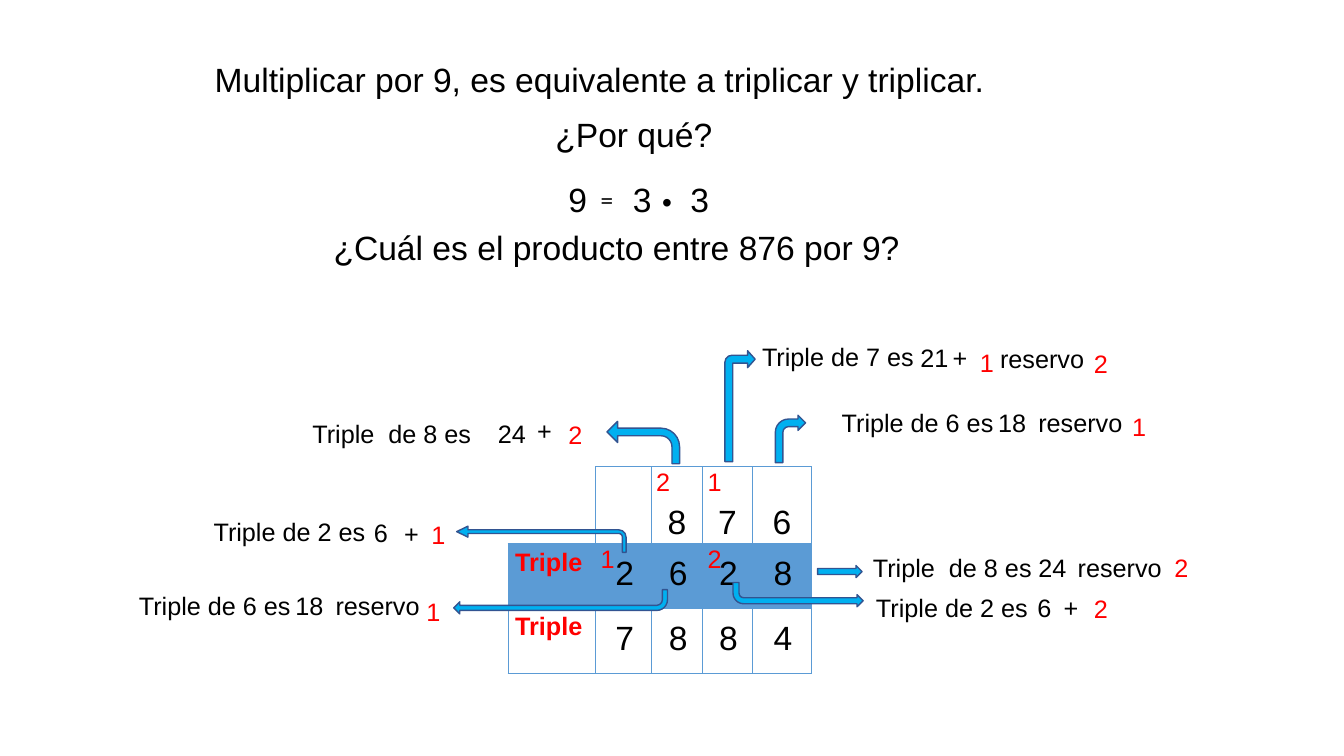
from itertools import accumulate
from lxml.etree import SubElement
from pptx import Presentation
from pptx.dml.color import RGBColor
from pptx.enum.shapes import MSO_SHAPE
from pptx.enum.text import MSO_ANCHOR, MSO_AUTO_SIZE, PP_ALIGN
from pptx.oxml.ns import qn
from pptx.util import Inches, Pt

COLORS = {"ink": "000000", "red": "FF0000", "grid": "5B9BD5",
          "arrow": "00B0F0", "edge": "325491"}
PLAIN = "{2D5ABB26-0587-4C30-8999-92F81FD0307C}"
COLS = [0.87, 0.55, 0.51, 0.49, 0.59]
ROWS = [0.77, 0.64, 0.64]
WIDTHS = {"reservo": 1.08, "18": 0.55, "24": 0.51, "21": 0.59, "6": 0.35}


def paint(name):
    return RGBColor.from_string(COLORS[name])


def write(para, text, size, color="ink", bold=False, font="Arial"):
    run = para.add_run()
    run.text = text
    run.font.size = Pt(size)
    run.font.name = font
    run.font.bold = bold
    run.font.color.rgb = paint(color)


def space(para):
    para.line_spacing = 1.15
    para.space_after = Pt(10)


def label(slide, box, text, size, color="ink", font="Arial", wrap=True):
    frame = slide.shapes.add_textbox(*map(Inches, box)).text_frame
    frame.word_wrap = wrap
    frame.auto_size = MSO_AUTO_SIZE.SHAPE_TO_FIT_TEXT
    para = frame.paragraphs[0]
    if color == "red":
        para.alignment = PP_ALIGN.CENTER
    if color == "red" or not wrap:
        space(para)
    write(para, text, size, color, font=font)


def heading(slide, left, top):
    label(slide, (left, top, 7.92, 0.53),
          "Multiplicar por 9, es equivalente a triplicar y triplicar.", 24, wrap=False)
    label(slide, (left + 3.38, top + 0.6, 2.08, 0.5), "¿Por qué?", 24)
    # Equation 9 = 3 • 3
    signs = [(3.51, "9", 24, "Arial"), (3.83, "=", 18, "Calibri"),
             (4.15, "3", 24, "Arial"), (4.44, "•", 20, "Arial"), (4.72, "3", 24, "Arial")]
    for shift, sign, size, font in signs:
        drop = 1.25 if size == 24 else 1.3
        label(slide, (left + shift, top + drop, 0.43, 0.5), sign, size, font=font)
    label(slide, (left + 1.18, top + 1.72, 6, 0.5),
          "¿Cuál es el producto entre 876 por 9?", 24)


def border(cell, sides):
    props = cell._tc.get_or_add_tcPr()
    for side in "LRTB":
        if side in sides:
            line = SubElement(props, qn("a:ln" + side), w=str(Pt(sides[side])))
            fill = SubElement(line, qn("a:solidFill"))
            SubElement(fill, qn("a:srgbClr"), val=COLORS["grid"])


def shade(cell, on):
    if not on:
        cell.fill.background()
        return
    cell.fill.solid()
    cell.fill.fore_color.rgb = paint("grid")
    tint = cell._tc.tcPr.find(".//" + qn("a:srgbClr"))
    SubElement(tint, qn("a:alpha"), val="20000")


def product(slide, left, top):
    frame = slide.shapes.add_table(3, 5, *map(Inches, (left, top, sum(COLS), sum(ROWS))))
    table = frame.table
    table.first_row = table.horz_banding = False
    table._tbl.tblPr.find(qn("a:tableStyleId")).text = PLAIN
    for col, width in zip(table.columns, COLS):
        col.width = Inches(width)
    for row, height in zip(table.rows, ROWS):
        row.height = Inches(height)
    for i in range(3):
        for j in range(5):
            cell = table.cell(i, j)
            cell.margin_left = cell.margin_right = Inches(0.07)
            cell.margin_top = cell.margin_bottom = 0
            sides = {"L": 1, "R": 1, "T": 2 if i == 1 else 1, "B": 1 if i else 2}
            if i == j == 0:
                sides = {"R": 1, "B": 2}
            border(cell, sides)
            shade(cell, i == 1)
            para = cell.text_frame.paragraphs[0]
            if i == 0 and j > 1:
                cell.vertical_anchor = MSO_ANCHOR.BOTTOM
                cell.margin_bottom = Inches(0.03)
                para.alignment = PP_ALIGN.CENTER
                para.line_spacing = 1.15
                write(para, "876"[j - 2], 24)
            elif i and j == 0:
                space(para)
                write(para, "Triple", 18, "red", True)
    # Digits of both triples, centred on their columns
    xs = list(accumulate(COLS, initial=left))
    ys = list(accumulate(ROWS, initial=top))
    for row, digits in enumerate(("2628", "7884"), 1):
        for col, digit in enumerate(digits, 1):
            x = xs[col] + COLS[col] / 2 - 0.18
            label(slide, (x, ys[row] + 0.03, 0.34, 0.5), digit, 24)
    # Carried digits in the cell corners
    for row, col, digit in [(0, 2, "2"), (0, 3, "1"), (1, 1, "1"), (1, 3, "2")]:
        label(slide, (xs[col] - 0.05, ys[row] - 0.1, 0.3, 0.42), digit, 18, "red")


def note(slide, left, top, lead, parts):
    label(slide, (left, top, 1.9, 0.4), lead, 18)
    for shift, drop, text in parts:
        color = "red" if text in "12" else "ink"
        box = (left + shift, top + drop, WIDTHS.get(text, 0.3), 0.4)
        label(slide, box, text, 18, color)


def arrow(slide, box, kind=MSO_SHAPE.BENT_ARROW, flip=None, turn=0, bends=()):
    shape = slide.shapes.add_shape(kind, *map(Inches, box))
    shape.shadow.inherit = False
    shape.fill.solid()
    shape.fill.fore_color.rgb = paint("arrow")
    shape.line.color.rgb = paint("edge")
    shape.line.width = Pt(1)
    shape.rotation = turn
    if flip:
        shape._element.spPr.xfrm.set(flip, "1")
    for k, bend in enumerate(bends):
        shape.adjustments[k] = bend


def arrows(slide, left, top):
    # Offsets from the table's corner
    def place(x, y, width, height, **look):
        arrow(slide, (left + x, top + y, width, height), **look)

    place(2.15, -1.15, 0.3, 1.1, bends=(0.26, 0.28, 0.25, 0.23))
    place(0.98, -0.45, 0.72, 0.42, flip="flipV", turn=180, bends=(0.18, 0.25, 0.25, 0.44))
    place(2.65, -0.51, 0.3, 0.47)
    place(3.07, 0.98, 0.44, 0.12, kind=MSO_SHAPE.RIGHT_ARROW)
    place(2.23, 1.15, 1.29, 0.24, flip="flipV")
    place(-0.51, 0.59, 1.68, 0.26, flip="flipH", bends=(0.14, 0.21, 0.43, 0.28))
    place(-0.54, 1.22, 2.12, 0.24, turn=180, bends=(0.21, 0.25, 0.25, 0.44))


def notes(slide):
    # Steps of the first triple
    note(slide, 7.46, 3.34, "Triple de 7 es",
         [(1.57, 0.01, "21"), (1.89, 0.01, "+"), (2.16, 0.01, "1"),
          (2.36, 0.02, "reservo"), (3.29, 0.02, "2")])
    note(slide, 8.25, 3.99, "Triple de 6 es",
         [(1.55, 0, "18"), (1.95, 0, "reservo"), (2.88, 0, "1")])
    note(slide, 3, 4.1, "Triple  de 8 es",
         [(1.84, 0, "24"), (2.23, -0.03, "+"), (2.54, -0.03, "2")])
    # Steps of the second triple
    note(slide, 8.56, 5.43, "Triple  de 8 es",
         [(1.64, 0, "24"), (2.03, 0, "reservo"), (2.99, -0.04, "2")])
    note(slide, 8.59, 5.83, "Triple de 2 es",
         [(1.6, 0, "6"), (1.86, 0, "+"), (2.16, -0.04, "2")])
    note(slide, 1.28, 5.81, "Triple de 6 es",
         [(1.55, 0, "18"), (1.95, 0, "reservo"), (2.85, 0.01, "1")])
    note(slide, 2.02, 5.07, "Triple de 2 es",
         [(1.59, 0.01, "6"), (1.89, 0.02, "+"), (2.16, -0.01, "1")])


def main():
    deck = Presentation()
    deck.slide_width = Inches(13.33)
    deck.slide_height = Inches(7.5)
    slide = deck.slides.add_slide(deck.slide_layouts[6])
    heading(slide, 2.03, 0.48)
    product(slide, 5.04, 4.63)
    arrows(slide, 5.04, 4.63)
    notes(slide)
    deck.save("out.pptx")


if __name__ == "__main__":
    main()
